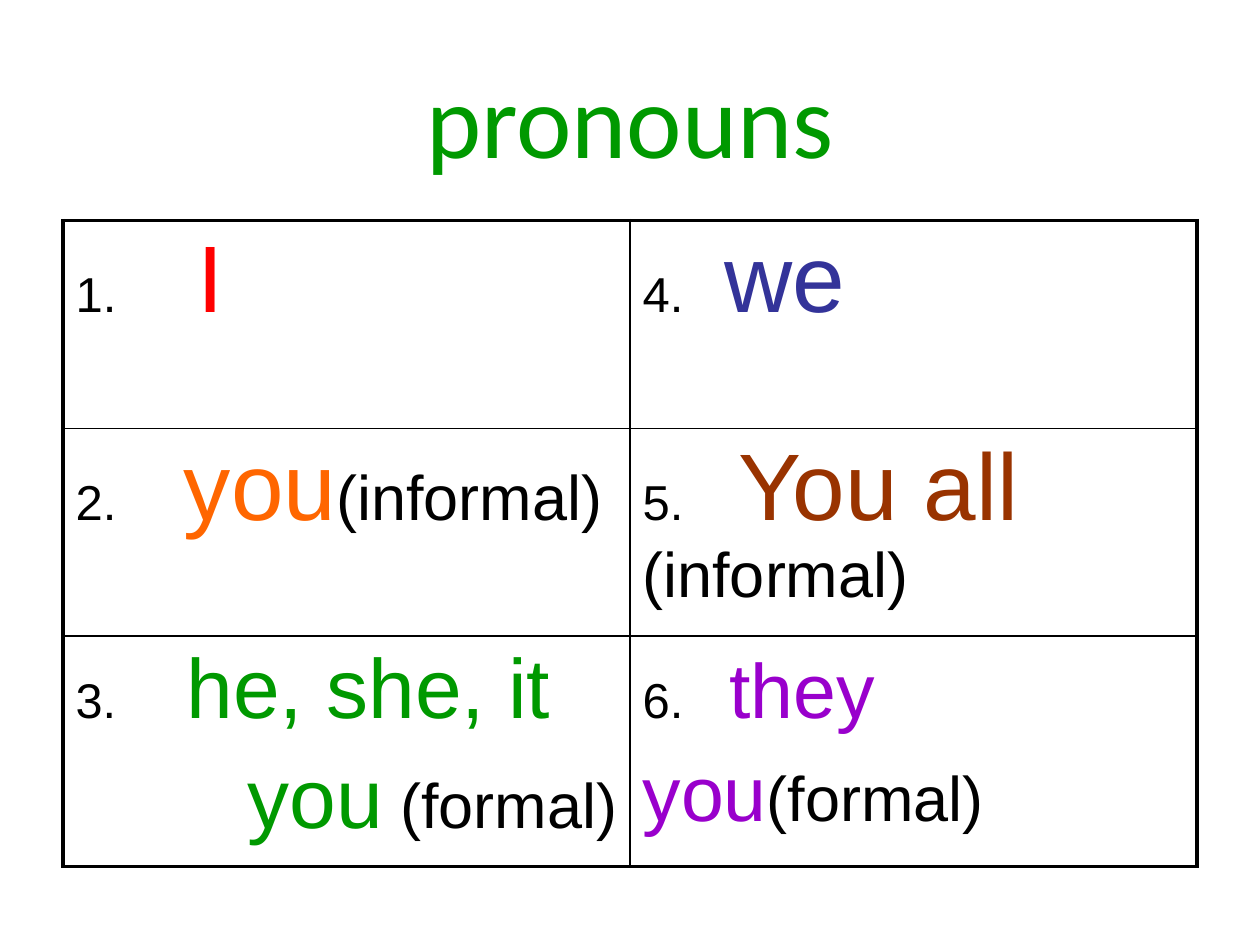
import pptx
import pptx.dml.color
import pptx.enum.text
import pptx.oxml
import pptx.oxml.ns
import pptx.util
from lxml import etree

Inches, Pt = pptx.util.Inches, pptx.util.Pt
ALIGN = pptx.enum.text.PP_ALIGN
COLORS = {
    "black": "000000", "red": "FF0000", "blue": "333399", "orange": "FF6600",
    "brown": "993300", "green": "009900", "purple": "9900CC",
}


def add_run(paragraph, text, size, color, font="Arial"):
    run = paragraph.add_run()
    run.text = text
    for attribute, value in {"size": Pt(size), "name": font}.items():
        setattr(run.font, attribute, value)
    run.font.color.rgb = pptx.dml.color.RGBColor.from_string(COLORS[color])


def add_child(parent, tag, **attributes):
    child = etree.SubElement(parent, pptx.oxml.ns.qn(tag))
    for name, value in attributes.items():
        child.set(name, str(value))
    return child


presentation = pptx.Presentation()
presentation.slide_width, presentation.slide_height = Inches(10), Inches(7.5)
slide = presentation.slides.add_slide(presentation.slide_layouts[6])

heading = slide.shapes.add_textbox(Inches(0.5), Inches(0.3), Inches(9), Inches(1.25)).text_frame
heading_format = {"word_wrap": True, "vertical_anchor": pptx.enum.text.MSO_ANCHOR.MIDDLE}
for attribute, value in heading_format.items():
    setattr(heading, attribute, value)
heading.paragraphs[0].alignment = ALIGN.CENTER
add_run(heading.paragraphs[0], "pronouns", 60, "green", "Calibri")

# Each cell: distance to the pronoun, then paragraphs of (text, size, colour) runs
informal, formal = ("(informal)", 36, "black"), ("(formal)", 36, "black")
cells = [
    [(0.97, [[("1.\t", 28, "black"), ("I", 54, "red")]]),
     (0.65, [[("4.\t", 28, "black"), ("we", 54, "blue")]])],
    [(0.86, [[("2.\t", 28, "black"), ("you", 54, "orange"), informal]]),
     (0.76, [[("5.\t", 28, "black"), ("You all", 54, "brown"), (" (informal)", 36, "black")]])],
    [(0.88, [[("he, she, it", 48, "green")],
             [("you", 48, "green"), (" (formal)", 36, "black")]]),
     (0.69, [[("6.", 28, "black"), ("\t", 48, "purple"), ("they", 44, "purple")],
             [("you", 44, "purple"), formal]])],
]
row_count, column_count = len(cells), len(cells[0])
table = slide.shapes.add_table(
    row_count, column_count, Inches(0.5), Inches(1.75), Inches(9), Inches(1.65 * row_count)
).table
for attribute in ("first_row", "horz_banding"):
    setattr(table, attribute, False)

for row, row_cells in enumerate(cells):
    for column, (offset, lines) in enumerate(row_cells):
        cell = table.cell(row, column)
        for index, runs in enumerate(lines):
            frame = cell.text_frame
            line = frame.add_paragraph() if index else frame.paragraphs[0]
            if index:
                line.space_before = Pt(9)
            for text, size, color in runs:
                add_run(line, text, size, color)
            if any("\t" in text for text, size, color in runs):
                tabs = add_child(line._p.get_or_add_pPr(), "a:tabLst")
                add_child(tabs, "a:tab", pos=Inches(offset), algn="l")

        # Thick frame around the table, thin rules inside
        edges = {"L": column == 0, "R": column == column_count - 1,
                 "T": row == 0, "B": row == row_count - 1}
        cell_properties = cell._tc.get_or_add_tcPr()
        for side, is_outer in edges.items():
            border = add_child(cell_properties, f"a:ln{side}", w=Pt(2.25 if is_outer else 1))
            add_child(add_child(border, "a:solidFill"), "a:srgbClr", val=COLORS["black"])
        cell.fill.background()

# The third person is an automatically numbered line, with the formal form at the right
third_person, formal_you = table.cell(2, 0).text_frame.paragraphs
formal_you.alignment = ALIGN.RIGHT
numbering = third_person._p.get_or_add_pPr()
hanging = Inches(cells[2][0][0])
numbering.set("marL", str(hanging))
numbering.set("indent", str(-hanging))
add_child(add_child(numbering, "a:buClr"), "a:srgbClr", val=COLORS["black"])
add_child(numbering, "a:buSzPct", val=58000)
add_child(numbering, "a:buFont", typeface="Arial")
add_child(numbering, "a:buAutoNum", type="arabicPeriod", startAt=3)

presentation.save("out.pptx")
